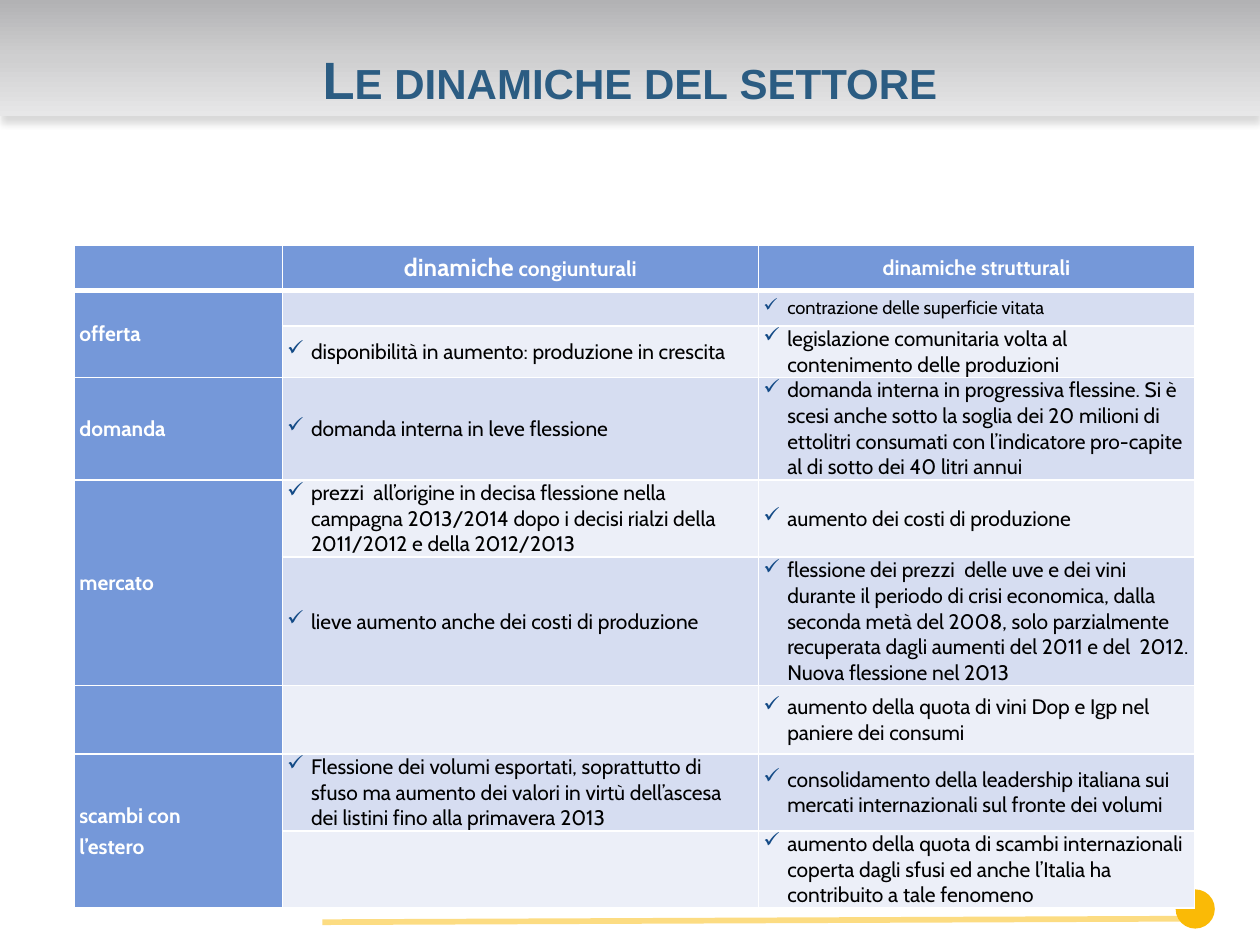
from dataclasses import dataclass
from typing import NamedTuple

from lxml.etree import SubElement
from pptx import Presentation
from pptx.dml.color import RGBColor
from pptx.enum.shapes import MSO_CONNECTOR, MSO_SHAPE
from pptx.enum.text import MSO_ANCHOR, PP_ALIGN
from pptx.oxml.ns import qn
from pptx.util import Cm, Pt


@dataclass(frozen=True)
class Theme:
    title_font: str = "Arial"
    body_font: str = "Cabin"
    title: str = "2B5C82"
    head: str = "7598D9"
    bands: tuple = ("D6DDF1", "ECEFF8")
    white: str = "FFFFFF"
    text: str = "000000"
    tick: str = "134A86"
    accent: str = "FABA06"
    shadow: str = "D9D9D9"
    banner: tuple = ((0, "B2B2B4"), (50, "CFCFD0"), (100, "E7E7E8"))
    title_size: float = 30
    large_size: float = 14
    body_size: float = 12
    small_size: float = 10.5


class Row(NamedTuple):
    height: float
    topic: str
    short_term: str
    structural: str
    structural_size: float = 12
    topic_rows: int = 1


THEME = Theme()
COLUMN_WIDTHS = (4.19, 9.6, 8.79)
HEADER_HEIGHT = 0.91
ROWS = (
    Row(0.71, "offerta", "", "contrazione delle superficie vitata", THEME.small_size, topic_rows=2),
    Row(1.04, "", "disponibilità in aumento: produzione in crescita",
        "legislazione comunitaria volta al contenimento delle produzioni"),
    Row(2.07, "domanda", "domanda interna in leve flessione",
        "domanda interna in progressiva flessine. Si è scesi anche sotto la soglia dei 20 milioni "
        "di ettolitri consumati con l’indicatore pro-capite al di sotto dei 40 litri annui"),
    Row(1.55, "mercato",
        "prezzi  all’origine in decisa flessione nella campagna 2013/2014 dopo i decisi rialzi "
        "della 2011/2012 e della 2012/2013",
        "aumento dei costi di produzione", topic_rows=2),
    Row(2.59, "", "lieve aumento anche dei costi di produzione",
        "flessione dei prezzi  delle uve e dei vini durante il periodo di crisi economica, dalla "
        "seconda metà del 2008, solo parzialmente recuperata dagli aumenti del 2011 e del  2012. "
        "Nuova flessione nel 2013"),
    Row(1.38, "", "", "aumento della quota di vini Dop e Igp nel paniere dei consumi"),
    Row(1.55, "scambi con\nl’estero",
        "Flessione dei volumi esportati, soprattutto di sfuso ma aumento dei valori in virtù "
        "dell’ascesa dei listini fino alla primavera 2013",
        "consolidamento della leadership italiana sui mercati internazionali sul fronte dei volumi",
        topic_rows=2),
    Row(1.55, "", "", "aumento della quota di scambi internazionali coperta dagli sfusi ed anche "
        "l’Italia ha contribuito a tale fenomeno"),
)


def rgb(color: str) -> RGBColor:
    return RGBColor.from_string(color)


def add_child(parent, tag: str, **attributes):
    return SubElement(parent, qn(tag), {key: str(value) for key, value in attributes.items()})


def style_span(span, size: float, color: str, bold: bool, font: str = THEME.body_font) -> None:
    span.font.name = font
    span.font.size = Pt(size)
    span.font.bold = bold
    span.font.color.rgb = rgb(color)


def style_cell(cell, fill: str, bottom_width: float = 1) -> None:
    cell.margin_left = cell.margin_right = Cm(0.1)
    cell.margin_top = cell.margin_bottom = 0
    cell.vertical_anchor = MSO_ANCHOR.MIDDLE
    properties = cell._tc.get_or_add_tcPr()
    for side in "LRTB":
        width = bottom_width if side == "B" else 1
        border = add_child(properties, f"a:ln{side}", w=Pt(width))
        add_child(add_child(border, "a:solidFill"), "a:srgbClr", val=THEME.white)
    cell.fill.solid()
    cell.fill.fore_color.rgb = rgb(fill)


def add_tick(para) -> None:
    properties = para._p.get_or_add_pPr()
    properties.set("marL", str(Cm(0.48)))
    properties.set("indent", str(-Cm(0.48)))
    add_child(add_child(properties, "a:buClr"), "a:srgbClr", val=THEME.tick)
    add_child(properties, "a:buChar", char="✓")


def write_cell(cell, text: str, size: float, color: str, bold: bool, ticked: bool = False) -> None:
    if not text:
        # Keeps the default size of an empty cell from stretching its row
        add_child(cell.text_frame.paragraphs[0]._p, "a:endParaRPr", sz=int(size * 100))
        return
    cell.text_frame.text = text
    for index, para in enumerate(cell.text_frame.paragraphs):
        if index:
            para.space_before = Pt(3)
        if ticked:
            add_tick(para)
        for span in para.runs:
            style_span(span, size, color, bold)


def add_header(table) -> None:
    for cell, text in zip(table.rows[0].cells, ("", "dinamiche", "dinamiche strutturali")):
        style_cell(cell, THEME.head, bottom_width=3)
        write_cell(cell, text, THEME.body_size, THEME.white, True)
        cell.text_frame.paragraphs[0].alignment = PP_ALIGN.CENTER
    para = table.cell(0, 1).text_frame.paragraphs[0]
    para.runs[0].font.size = Pt(THEME.large_size)
    span = para.add_run()
    span.text = " congiunturali"
    style_span(span, THEME.body_size, THEME.white, True)


def add_dynamics_table(page) -> None:
    heights = (HEADER_HEIGHT, *(row.height for row in ROWS))
    table = page.shapes.add_table(len(heights), len(COLUMN_WIDTHS), Cm(1.5), Cm(4.95),
                                  Cm(sum(COLUMN_WIDTHS)), Cm(sum(heights))).table
    table.first_row = table.horz_banding = False
    for column, width in zip(table.columns, COLUMN_WIDTHS):
        column.width = Cm(width)
    for table_row, height in zip(table.rows, heights):
        table_row.height = Cm(height)
    add_header(table)
    for number, row in enumerate(ROWS, start=1):
        topic, short_term, structural = table.rows[number].cells
        band = THEME.bands[(number - 1) % 2]
        for cell, fill in ((topic, THEME.head), (short_term, band), (structural, band)):
            style_cell(cell, fill)
        write_cell(topic, row.topic, THEME.body_size, THEME.white, True)
        write_cell(short_term, row.short_term, THEME.body_size, THEME.text, False, ticked=True)
        write_cell(structural, row.structural, row.structural_size, THEME.text, False, ticked=True)
        if row.topic_rows > 1:
            topic.merge(table.cell(number + row.topic_rows - 1, 0))


def add_footer_ornament(page) -> None:
    dot = page.shapes.add_shape(MSO_SHAPE.OVAL, Cm(23.7), Cm(17.93), Cm(0.79), Cm(0.79))
    dot.shadow.inherit = False
    dot.fill.solid()
    dot.fill.fore_color.rgb = rgb(THEME.accent)
    dot.line.fill.background()
    rule = page.shapes.add_connector(MSO_CONNECTOR.STRAIGHT, Cm(6.5), Cm(18.59), Cm(23.9), Cm(18.52))
    rule.line.color.rgb = rgb(THEME.accent)
    rule.line.width = Pt(3.25)
    color = rule.line._ln.find(f".//{qn('a:srgbClr')}")
    add_child(color, "a:alpha", val=49000)
    add_child(rule._element.spPr, "a:effectLst")


def add_title_banner(page, width: int) -> None:
    banner = page.shapes.add_shape(MSO_SHAPE.RECTANGLE, 0, 0, width, Cm(2.34))
    banner.shadow.inherit = False
    banner.line.fill.background()
    banner.fill.gradient()
    banner.fill.gradient_angle = 270
    stops = banner._element.spPr.find(f".//{qn('a:gsLst')}")
    stops.clear()
    for position, color in THEME.banner:
        add_child(add_child(stops, "a:gs", pos=position * 1000), "a:srgbClr", val=color)
    effects = banner._element.spPr.find(qn("a:effectLst"))
    shadow = add_child(effects, "a:outerShdw", blurRad=Pt(4), dist=Pt(4), dir=90 * 60000,
                       algn="t", rotWithShape=0)
    add_child(shadow, "a:srgbClr", val=THEME.shadow)
    frame = banner.text_frame
    frame.word_wrap = True
    frame.vertical_anchor = MSO_ANCHOR.BOTTOM
    frame.text = "Le dinamiche del settore"
    para = frame.paragraphs[0]
    para.alignment = PP_ALIGN.CENTER
    span = para.runs[0]
    style_span(span, THEME.title_size, THEME.title, True, THEME.title_font)
    span.font._element.set("cap", "small")


def main() -> None:
    deck = Presentation()
    deck.slide_width, deck.slide_height = Cm(25.4), Cm(19.05)
    page = deck.slides.add_slide(deck.slide_layouts[6])
    add_footer_ornament(page)
    add_dynamics_table(page)
    add_title_banner(page, deck.slide_width)
    deck.save("out.pptx")


if __name__ == "__main__":
    main()
